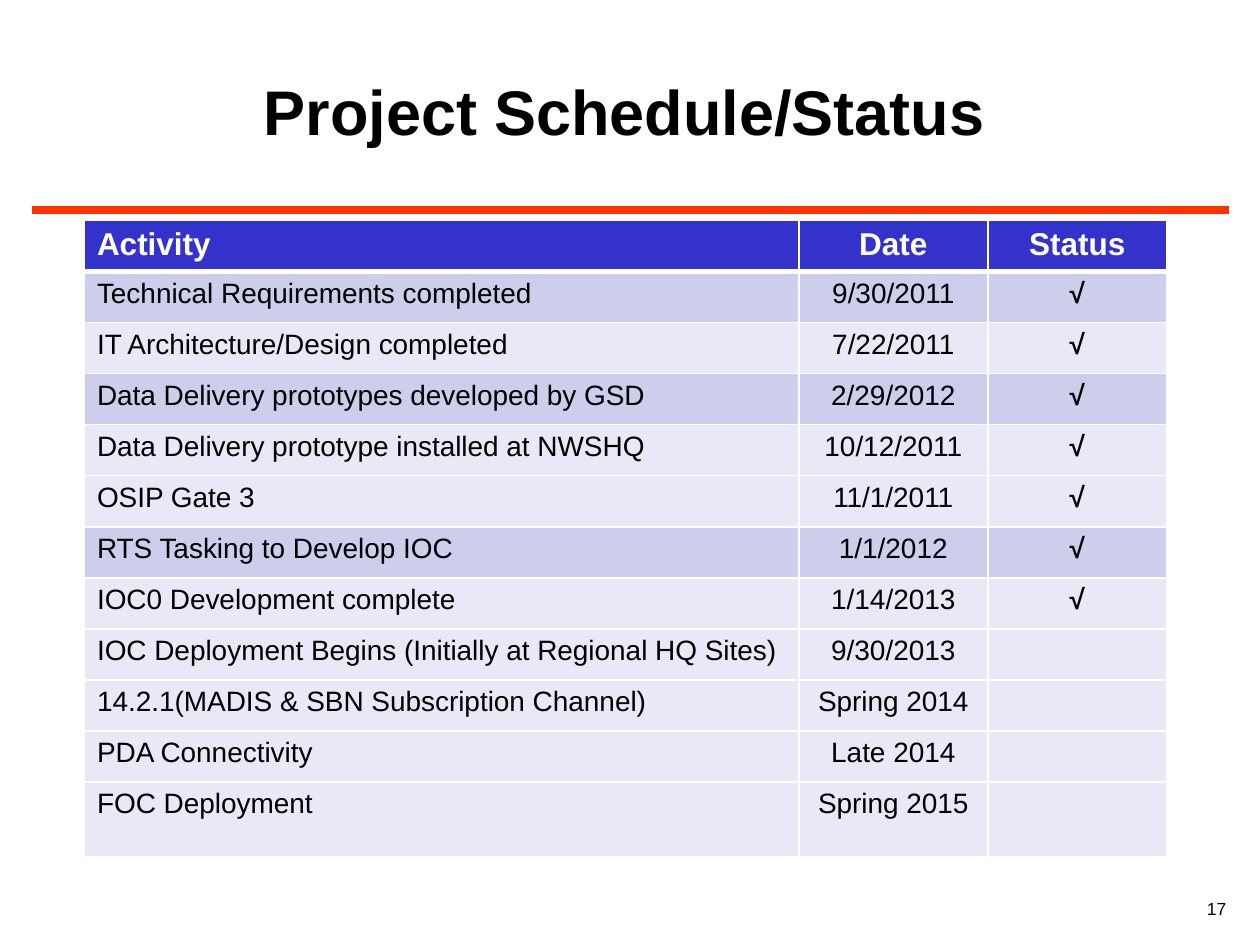
import dataclasses

import lxml.etree
import pptx
import pptx.dml.color
import pptx.enum.shapes
import pptx.enum.text
import pptx.oxml.ns
import pptx.util

Inches = pptx.util.Inches
Pt = pptx.util.Pt
RGB = pptx.dml.color.RGBColor.from_string
ALIGN = pptx.enum.text.PP_ALIGN
ANCHOR = pptx.enum.text.MSO_ANCHOR
qn = pptx.oxml.ns.qn


@dataclasses.dataclass
class Theme:
    font: str = "Arial"
    text: str = "000000"
    white: str = "FFFFFF"
    rule: str = "FF3300"
    header: str = "3333CC"
    dark_band: str = "CDCDEC"
    light_band: str = "E8E8F6"
    title_size: int = 36
    header_size: int = 18
    body_size: int = 16
    number_size: int = 10


class SlideBuilder:
    def __init__(self, slide, theme):
        self.slide = slide
        self.theme = theme

    def format(self, tf, size, color, bold, align):
        for p in tf.paragraphs:
            p.alignment = align
            for r in p.runs:
                r.font.name = self.theme.font
                r.font.size = Pt(size)
                r.font.bold = bold
                r.font.color.rgb = RGB(color)

    def text(self, text, left, top, width, height, size, bold, align, anchor):
        sp = self.slide.shapes.add_textbox(
            Inches(left), Inches(top), Inches(width), Inches(height))
        tf = sp.text_frame
        tf.word_wrap = True
        tf.vertical_anchor = anchor
        tf.text = text
        self.format(tf, size, self.theme.text, bold, align)

    def rule(self, x1, x2, y, weight):
        line = self.slide.shapes.add_connector(
            pptx.enum.shapes.MSO_CONNECTOR.STRAIGHT,
            Inches(x1), Inches(y), Inches(x2), Inches(y))
        line.line.color.rgb = RGB(self.theme.rule)
        line.line.width = Pt(weight)
        lxml.etree.SubElement(line._element.spPr, qn("a:effectLst"))

    def borders(self, cell, **weights):
        tc_pr = cell._tc.get_or_add_tcPr()
        for side in "LRTB":
            weight = weights.get(side, 1)
            ln = lxml.etree.SubElement(tc_pr, qn(f"a:ln{side}"), w=str(Pt(weight)))
            fill = lxml.etree.SubElement(ln, qn("a:solidFill"))
            lxml.etree.SubElement(fill, qn("a:srgbClr"), val=self.theme.white)

    def cell(self, cell, text, fill, size, color, bold, align, **weights):
        self.borders(cell, **weights)
        cell.fill.solid()
        cell.fill.fore_color.rgb = RGB(fill)
        if text:
            cell.text_frame.text = text
            self.format(cell.text_frame, size, color, bold, align)

    def table(self, headings, rows, dark_rows, left, top, widths, row_height, last_height):
        t = self.theme
        count = len(rows) + 1
        height = row_height * (count - 1) + last_height
        table = self.slide.shapes.add_table(
            count, len(headings), Inches(left), Inches(top),
            Inches(sum(widths)), Inches(height)).table
        table.horz_banding = False
        for column, width in zip(table.columns, widths):
            column.width = Inches(width)
        for row in table.rows:
            row.height = Inches(row_height)
        table.rows[count - 1].height = Inches(last_height)
        aligns = [ALIGN.LEFT, ALIGN.CENTER, ALIGN.CENTER]
        for c, heading in enumerate(headings):
            self.cell(table.cell(0, c), heading, t.header, t.header_size,
                      t.white, True, aligns[c], B=3)
        status_column = len(headings) - 1
        for i, row in enumerate(rows, 1):
            fill = t.dark_band if i in dark_rows else t.light_band
            for c, text in enumerate(row):
                self.cell(table.cell(i, c), text, fill, t.body_size, t.text,
                          c == status_column, aligns[c], T=3 if i == 1 else 1)


def main():
    prs = pptx.Presentation()
    prs.slide_width = Inches(10)
    prs.slide_height = Inches(7.5)
    theme = Theme()
    s = SlideBuilder(prs.slides.add_slide(prs.slide_layouts[6]), theme)

    s.rule(0.25, 9.75, 1.67, 4.5)
    s.text("Project Schedule/Status", 1.58, 0.25, 6.75, 1.25,
           theme.title_size, True, ALIGN.CENTER, ANCHOR.MIDDLE)

    done = "√"
    activities = [
        ("Technical Requirements completed", "9/30/2011", done),
        ("IT Architecture/Design completed", "7/22/2011", done),
        ("Data Delivery prototypes developed by GSD", "2/29/2012", done),
        ("Data Delivery prototype installed at NWSHQ", "10/12/2011", done),
        ("OSIP Gate 3", "11/1/2011", done),
        ("RTS Tasking to Develop IOC", "1/1/2012", done),
        ("IOC0 Development complete", "1/14/2013", done),
        ("IOC Deployment Begins (Initially at Regional HQ Sites)", "9/30/2013", ""),
        ("14.2.1(MADIS & SBN Subscription Channel)", "Spring 2014", ""),
        ("PDA Connectivity", "Late 2014", ""),
        ("FOC Deployment", "Spring 2015", ""),
    ]
    s.table(("Activity", "Date", "Status"), activities, {1, 3, 6},
            left=0.67, top=1.75, widths=(5.67, 1.5, 1.42),
            row_height=4.46 / len(activities), last_height=0.59)

    s.text("17", 7.75, 7.08, 2.08, 0.25,
           theme.number_size, False, ALIGN.RIGHT, ANCHOR.TOP)
    prs.save("out.pptx")


if __name__ == "__main__":
    main()
